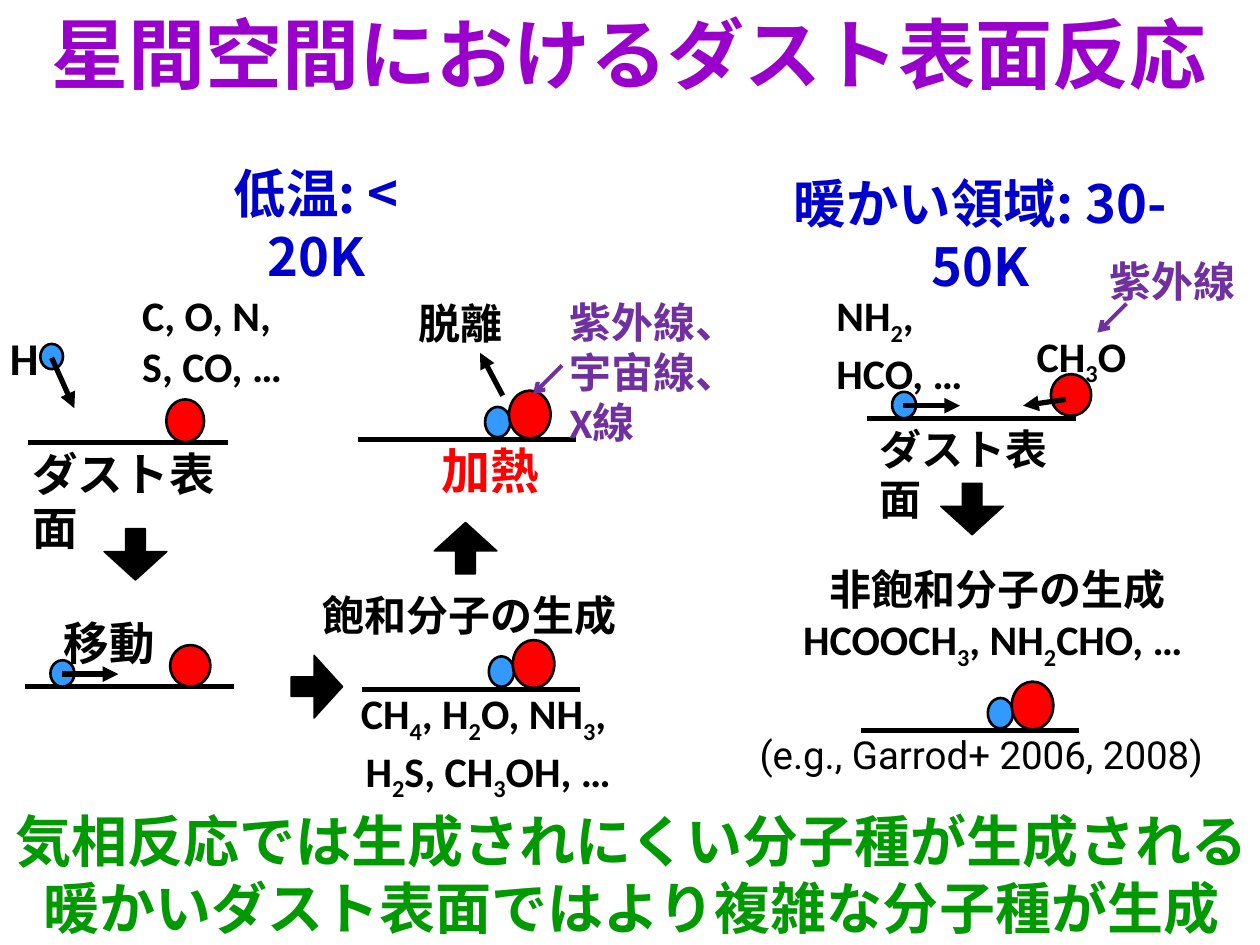
from lxml import etree
from pptx import Presentation
from pptx import util as u
from pptx.dml.color import RGBColor
from pptx.enum import shapes, text
from pptx.oxml.ns import qn

# Grid of 100 columns by 75 rows
SLIDE_W, SLIDE_H = u.Inches(10), u.Inches(7.5)
COL, ROW = SLIDE_W / 100, SLIDE_H / 75

BLACK = RGBColor(0x00, 0x00, 0x00)
BLUE = RGBColor(0x33, 0x99, 0xFF)
RED = RGBColor(0xFF, 0x00, 0x00)
NAVY = RGBColor(0x00, 0x00, 0xCC)
PURPLE = RGBColor(0x70, 0x30, 0xA0)
VIOLET = RGBColor(0x99, 0x00, 0xCC)
GREEN = RGBColor(0x00, 0x99, 0x00)

LATIN, GOTHIC, ROBOTO = "Calibri", "Noto Sans CJK JP", "Roboto"
LEFT, CENTER = text.PP_ALIGN.LEFT, text.PP_ALIGN.CENTER


def grid(x, y, w, h):
    return [round(n) for n in (x * COL, y * ROW, w * COL, h * ROW)]


def style(p, size, color, font, bold, align):
    p.alignment = align
    p.font.size = u.Pt(size)
    p.font.name = font
    p.font.bold = bold
    p.font.color.rgb = color


def add_formula(p, line):
    """Add a line of runs; the digit after each underscore is a subscript."""
    first, *rest = line.split("_")
    p.add_run().text = first
    for part in rest:
        r = p.add_run()
        r.text = part[0]
        r.font._element.set("baseline", "-25000")
        if part[1:]:
            p.add_run().text = part[1:]


def add_label(s, box, lines, size=24, color=BLACK, font=LATIN, bold=True,
              align=LEFT):
    tf = s.shapes.add_textbox(*grid(*box)).text_frame
    tf.word_wrap = True
    for i, line in enumerate(lines.split("\n")):
        p = tf.add_paragraph() if i else tf.paragraphs[0]
        add_formula(p, line)
        style(p, size, color, font, bold, align)


def add_line(s, x1, y1, x2, y2, color=BLACK, width=3, arrow=None):
    line = s.shapes.add_connector(shapes.MSO_CONNECTOR.STRAIGHT,
                                  *grid(x1, y1, x2, y2))
    line.line.color.rgb = color
    line.line.width = u.Pt(width)
    if arrow:
        etree.SubElement(line.line._get_or_add_ln(), qn("a:tailEnd"), type=arrow)
    etree.SubElement(line._element.spPr, qn("a:effectLst"))


def add_filled(s, kind, box, fill, width):
    sp = s.shapes.add_shape(kind, *grid(*box))
    sp.shadow.inherit = False
    sp.fill.solid()
    sp.fill.fore_color.rgb = fill
    sp.line.color.rgb = BLACK
    sp.line.width = u.Pt(width)
    return sp


def add_atom(s, x, y, w, h, color):
    add_filled(s, shapes.MSO_SHAPE.OVAL, (x, y, w, h), color, 1.5)


def add_step(s, x, y, rotation=0):
    """Block arrow from one stage to the next."""
    sp = add_filled(s, shapes.MSO_SHAPE.RIGHT_ARROW, (x, y, 4.1, 5), BLACK, 0.75)
    sp.adjustments[0], sp.adjustments[1] = 0.314, 0.554
    sp.rotation = rotation


def add_surface(s, x, y, length):
    add_line(s, x, y, x + length, y)


def add_bound_pair(s, x, y):
    """Surface carrying a small and a large particle that touch."""
    add_surface(s, x, y, 17.3)
    add_atom(s, x + 10.1, y - 2.6, 2, 2.4, BLUE)
    add_atom(s, x + 12, y - 3.9, 3.3, 3.8, RED)


def add_migration(s, x, y, red_x, red_y):
    """Surface on which a small particle moves towards a large one."""
    add_surface(s, x, y, 16.6)
    add_atom(s, x + 2, y - 2.1, 1.9, 2.1, BLUE)
    add_atom(s, red_x, red_y, 3.2, 3.3, RED)
    add_line(s, x + 2.9, y - 1, x + 7.4, y - 1, arrow="triangle")


def add_uv_arrow(s, x, y):
    add_line(s, x, y, x - 2.3, y + 2.3, PURPLE, 2.25, "arrow")


def add_title(s):
    title = s.shapes.title
    title.left, title.top, title.width, title.height = grid(0, 0, 100, 8.3)
    tf = title.text_frame
    tf.vertical_anchor = text.MSO_ANCHOR.MIDDLE
    tf.text = "星間空間におけるダスト表面反応"
    style(tf.paragraphs[0], 44, VIOLET, LATIN, True, CENTER)


def add_cold_region(s):
    add_surface(s, 2.2, 35.1, 15.9)
    add_atom(s, 3.2, 27.3, 1.8, 2, BLUE)
    add_atom(s, 13.2, 31.7, 3, 3.4, RED)
    add_line(s, 4.1, 28.4, 5.9, 32.4, arrow="triangle")
    add_step(s, 8.7, 41.5, 90)
    add_migration(s, 2, 54.5, 13.5, 51.2)
    add_step(s, 23.1, 52)
    add_bound_pair(s, 28.7, 54.7)
    add_step(s, 34.9, 41, 270)
    add_bound_pair(s, 28.4, 34.9)
    add_line(s, 39.9, 31.4, 38.1, 28, arrow="triangle")
    add_uv_arrow(s, 44.6, 29)

    add_label(s, (13.7, 12.3, 22.8, 6.1), "低温: < 20K", 30, NAVY, GOTHIC,
              align=CENTER)
    add_label(s, (-0.2, 25.7, 4.3, 5.4), "H", 26)
    add_label(s, (10.3, 22.5, 13.2, 9.1), "C, O, N,\nS, CO, …")
    add_label(s, (1.6, 34.9, 18.3, 5.4), "ダスト表面", 26)
    add_label(s, (4.1, 48.3, 9.3, 5.4), "移動", 26, font=GOTHIC)
    add_label(s, (24, 46.3, 26.5, 5.6), "飽和分子の生成", align=CENTER)
    add_label(s, (27.3, 54.1, 22.9, 9.1),
              "CH_4, H_2O, NH_3, \nH_2S, CH_3OH, …", align=CENTER)
    add_label(s, (34, 34.5, 9.9, 5.7), "加熱", 28, RED, align=CENTER)
    add_label(s, (32.2, 23.1, 8.8, 5), "脱離")
    add_label(s, (44.2, 23, 14.4, 13.1), "紫外線、\n宇宙線、\nX線", color=PURPLE)


def add_warm_region(s):
    add_migration(s, 68.8, 33.2, 83.4, 29.7)
    add_line(s, 84.6, 31.7, 81.2, 32.2, arrow="triangle")
    add_uv_arrow(s, 89.4, 24.1)
    add_step(s, 75.1, 37.9, 90)
    add_bound_pair(s, 68.3, 58)

    add_label(s, (58.7, 13.1, 38.2, 6.1), "暖かい領域: 30-50K", 30, NAVY, GOTHIC,
              align=CENTER)
    add_label(s, (65.4, 22.5, 12.1, 9.1), "NH_2,\nHCO, …")
    add_label(s, (81.3, 25.7, 9.3, 5.1), "CH_3O")
    add_label(s, (87, 19.8, 12.1, 5), "紫外線", color=PURPLE, font=ROBOTO,
              align=CENTER)
    add_label(s, (68.8, 33.1, 17.1, 5), "ダスト表面")
    add_label(s, (62.4, 44.2, 32.8, 9.1),
              " 非飽和分子の生成\nHCOOCH_3, NH_2CHO, …", align=CENTER)
    add_label(s, (59.3, 57.5, 39.8, 4.7), "(e.g., Garrod+ 2006, 2008)", 22,
              font=ROBOTO, bold=False)


def add_conclusion(s):
    add_label(s, (-0.4, 63.5, 101.1, 11.8),
              "気相反応では生成されにくい分子種が生成される\n"
              "暖かいダスト表面ではより複雑な分子種が生成",
              32, GREEN, ROBOTO, align=CENTER)


def main():
    prs = Presentation()
    prs.slide_width, prs.slide_height = SLIDE_W, SLIDE_H
    s = prs.slides.add_slide(prs.slide_layouts[5])
    add_title(s)
    add_cold_region(s)
    add_warm_region(s)
    add_conclusion(s)
    prs.save("out.pptx")


if __name__ == "__main__":
    main()
